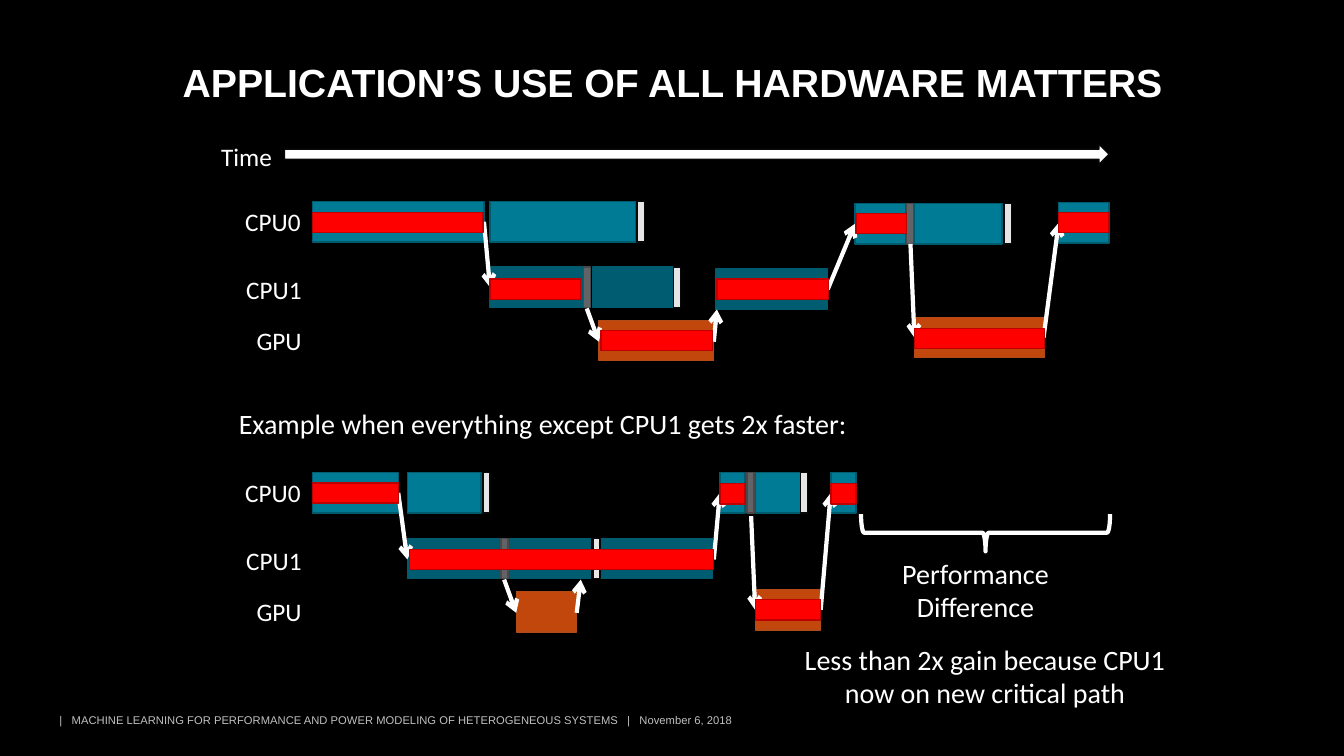
from dataclasses import dataclass
from lxml import etree
from pptx import Presentation
from pptx.dml.color import RGBColor
from pptx.enum.shapes import MSO_CONNECTOR as CONN, MSO_SHAPE as SHAPE
from pptx.enum.text import MSO_ANCHOR as ANCHOR, PP_ALIGN as ALIGN
from pptx.oxml.ns import qn
from pptx.util import Inches, Pt


@dataclass(frozen=True)
class Theme:
    back: str = "000000"
    text: str = "FFFFFF"
    footer: str = "C1C1C1"
    edge: str = "080808"
    critical: tuple = ("FF0000", "BD0000")
    body_font: str = "Calibri"
    head_font: str = "Arial"
    title_size: int = 28
    note_size: int = 20
    label_size: int = 18
    footer_size: int = 8
    arrow_width: int = 3


T = Theme()

# Fill and line of each kind of block
BLOCKS = {
    "CPU0": ("007B96", "005B6F"),
    "CPU1": ("005C70", "005B6F"),
    "GPU": ("C1470C", "B24B18"),
    "launch": ("626366", "49494B"),
    "end": ("E7E6E6", T.edge),
}
LANES = {"CPU0": 0, "CPU1": 0.65, "GPU": 1.18}
LABELS = {"CPU0": (-0.92, 0), "CPU1": (-0.91, 0.67), "GPU": (-0.91, 1.18)}
BLOCK_H, CRITICAL_H, CRITICAL_INSET, MARK_W = 0.4, 0.2, 0.11, 0.07

# Work: lane, start, length, vertical shift. Marks: lane, kind, start, shift.
# Arrows: x1, y1, x2, y2. All are inches from the top left of the timeline.
BASELINE = {
    "work": [
        ("CPU0", 0, 1.7, 0), ("CPU0", 1.76, 1.45, 0), ("CPU0", 5.38, 0.5, 0.02),
        ("CPU0", 5.97, 0.87, 0.02), ("CPU0", 7.4, 0.5, 0.01),
        ("CPU1", 1.76, 0.92, 0), ("CPU1", 2.78, 0.8, 0), ("CPU1", 4, 1.11, 0.02),
        ("GPU", 2.84, 1.14, 0), ("GPU", 5.97, 1.29, -0.03),
    ],
    "marks": [
        ("CPU0", "end", 3.22, 0), ("CPU0", "launch", 5.89, 0.02),
        ("CPU0", "end", 6.86, 0.02), ("CPU1", "launch", 2.69, 0),
        ("CPU1", "end", 3.58, 0),
    ],
    "arrows": [
        (1.7, 0.2, 1.76, 0.85), (2.72, 1.06, 2.84, 1.39), (3.98, 1.39, 4.01, 1.07),
        (5.11, 0.87, 5.38, 0.22), (5.93, 0.42, 5.97, 1.35), (7.25, 1.35, 7.4, 0.21),
    ],
    "critical": [
        ("CPU0", 0, 1.69, 0), ("CPU1", 1.76, 0.9, 0.01), ("GPU", 2.86, 1.11, -0.01),
        ("CPU1", 4.01, 1.11, 0.01), ("CPU0", 5.39, 0.5, 0.01),
        ("GPU", 5.97, 1.29, -0.03), ("CPU0", 7.4, 0.5, 0),
    ],
}
FASTER = {
    "work": [
        ("CPU0", 0, 0.85, 0), ("CPU0", 0.94, 0.73, 0), ("CPU0", 4.04, 0.25, 0),
        ("CPU0", 4.39, 0.45, 0), ("CPU0", 5.14, 0.25, 0),
        ("CPU1", 0.94, 0.92, 0), ("CPU1", 1.96, 0.8, 0), ("CPU1", 2.86, 1.11, 0),
        ("GPU", 2.02, 0.6, 0), ("GPU", 4.39, 0.65, -0.02),
    ],
    "marks": [
        ("CPU0", "end", 1.69, 0), ("CPU0", "launch", 4.31, 0),
        ("CPU0", "end", 4.84, 0), ("CPU1", "launch", 1.87, 0),
        ("CPU1", "end", 2.78, 0),
    ],
    "arrows": [
        (0.85, 0.2, 0.94, 0.86), (1.9, 1.06, 2.02, 1.39), (2.62, 1.39, 2.66, 1.06),
        (3.98, 0.86, 4.04, 0.2), (4.35, 0.43, 4.39, 1.36), (5.04, 1.36, 5.14, 0.2),
    ],
    "critical": [
        ("CPU0", 0, 0.85, -0.01), ("CPU1", 0.96, 3.02, 0), ("CPU0", 4.04, 0.25, 0),
        ("GPU", 4.39, 0.65, -0.03), ("CPU0", 5.14, 0.25, 0),
    ],
}


def rgb(value):
    return RGBColor.from_string(value)


def add_text(s, box, text, size, align=ALIGN.LEFT, font=T.body_font, color=T.text, bold=False):
    sp = s.shapes.add_textbox(*map(Inches, box))
    tf = sp.text_frame
    tf.word_wrap = True
    p = tf.paragraphs[0]
    p.alignment = align
    r = p.add_run()
    r.text = text
    r.font.name, r.font.size, r.font.bold = font, Pt(size), bold
    r.font.color.rgb = rgb(color)
    return tf


def add_block(s, kind, box, fill, line, width=1):
    sp = s.shapes.add_shape(kind, *map(Inches, box))
    sp.shadow.inherit = False
    if fill:
        sp.fill.solid()
        sp.fill.fore_color.rgb = rgb(fill)
    else:
        sp.fill.background()
    sp.line.color.rgb = rgb(line)
    sp.line.width = Pt(width)
    return sp


def add_arrow(s, points):
    cn = s.shapes.add_connector(CONN.STRAIGHT, *map(Inches, points))
    cn.line.color.rgb = rgb(T.text)
    cn.line.width = Pt(T.arrow_width)
    etree.SubElement(cn.line._get_or_add_ln(), qn("a:tailEnd"), type="arrow")
    etree.SubElement(cn._element.spPr, qn("a:effectLst"))


def add_header(s, left, top, width):
    tf = add_text(s, (left, top, width, 0.7), "APPLICATION’S USE OF ALL HARDWARE MATTERS",
                  T.title_size, ALIGN.CENTER, T.head_font, bold=True)
    tf.vertical_anchor = ANCHOR.MIDDLE
    tf.paragraphs[0].line_spacing = 0.9


def add_time_axis(s, left, top, width):
    add_text(s, (left, top, 0.75, 0.4), "Time", T.label_size, ALIGN.CENTER)
    add_block(s, SHAPE.RIGHT_ARROW, (left + 0.75, top + 0.08, width - 0.75, 0.2), T.text, T.edge)


def add_timeline(s, left, top, run):
    # Lane labels
    for name, (dx, dy) in LABELS.items():
        add_text(s, (left + dx, top + dy, 0.9, 0.4), name, T.label_size, ALIGN.RIGHT)
    # Work, then launch and end marks
    for lane, x, w, dy in run["work"]:
        add_block(s, SHAPE.RECTANGLE, (left + x, top + LANES[lane] + dy, w, BLOCK_H), *BLOCKS[lane])
    for lane, kind, x, dy in run["marks"]:
        add_block(s, SHAPE.RECTANGLE, (left + x, top + LANES[lane] + dy, MARK_W, BLOCK_H),
                  *BLOCKS[kind])
    # Dependencies
    for x1, y1, x2, y2 in run["arrows"]:
        add_arrow(s, (left + x1, top + y1, left + x2, top + y2))
    # Critical path
    for lane, x, w, dy in run["critical"]:
        y = top + LANES[lane] + CRITICAL_INSET + dy
        add_block(s, SHAPE.RECTANGLE, (left + x, y, w, CRITICAL_H), *T.critical)


def add_difference(s, left, top, width):
    # The brace is upright before its turn, so its box is centred on the span
    depth = 0.37
    box = (left + (width - depth) / 2, top + (depth - width) / 2, depth, width)
    add_block(s, SHAPE.LEFT_BRACE, box, None, T.text, T.arrow_width).rotation = 270
    add_text(s, (left, top + depth, 2.27, 0.77), "Performance Difference",
             T.note_size, ALIGN.CENTER)
    add_text(s, (left - 0.72, top + 1.22, 3.9, 0.77),
             "Less than 2x gain because CPU1 now on new critical path", T.note_size, ALIGN.CENTER)


def add_footer(s, left, top, width):
    tf = add_text(s, (left, top, width, 0.23),
                  "|   MACHINE LEARNING FOR PERFORMANCE AND POWER MODELING OF HETEROGENEOUS "
                  "SYSTEMS   |   November 6, 2018", T.footer_size, font=T.head_font, color=T.footer)
    tf.word_wrap = False
    tf.margin_left = tf.margin_right = 0
    tf.margin_top = tf.margin_bottom = Inches(0.04)
    tf.vertical_anchor = ANCHOR.MIDDLE


def main():
    prs = Presentation()
    prs.slide_width, prs.slide_height = Inches(13.33), Inches(7.5)
    s = prs.slides.add_slide(prs.slide_layouts[6])
    s.background.fill.solid()
    s.background.fill.fore_color.rgb = rgb(T.back)

    add_header(s, 0.43, 0.49, 12.48)
    add_time_axis(s, 2.07, 1.35, 8.93)
    add_timeline(s, 3.1, 2, BASELINE)
    add_text(s, (2.27, 3.98, 6.97, 0.44), "Example when everything except CPU1 gets 2x faster:",
             T.note_size)
    add_timeline(s, 3.1, 4.69, FASTER)
    add_difference(s, 8.54, 5.1, 2.47)
    add_footer(s, 0.59, 7.03, 6.74)
    prs.save("out.pptx")


if __name__ == "__main__":
    main()
